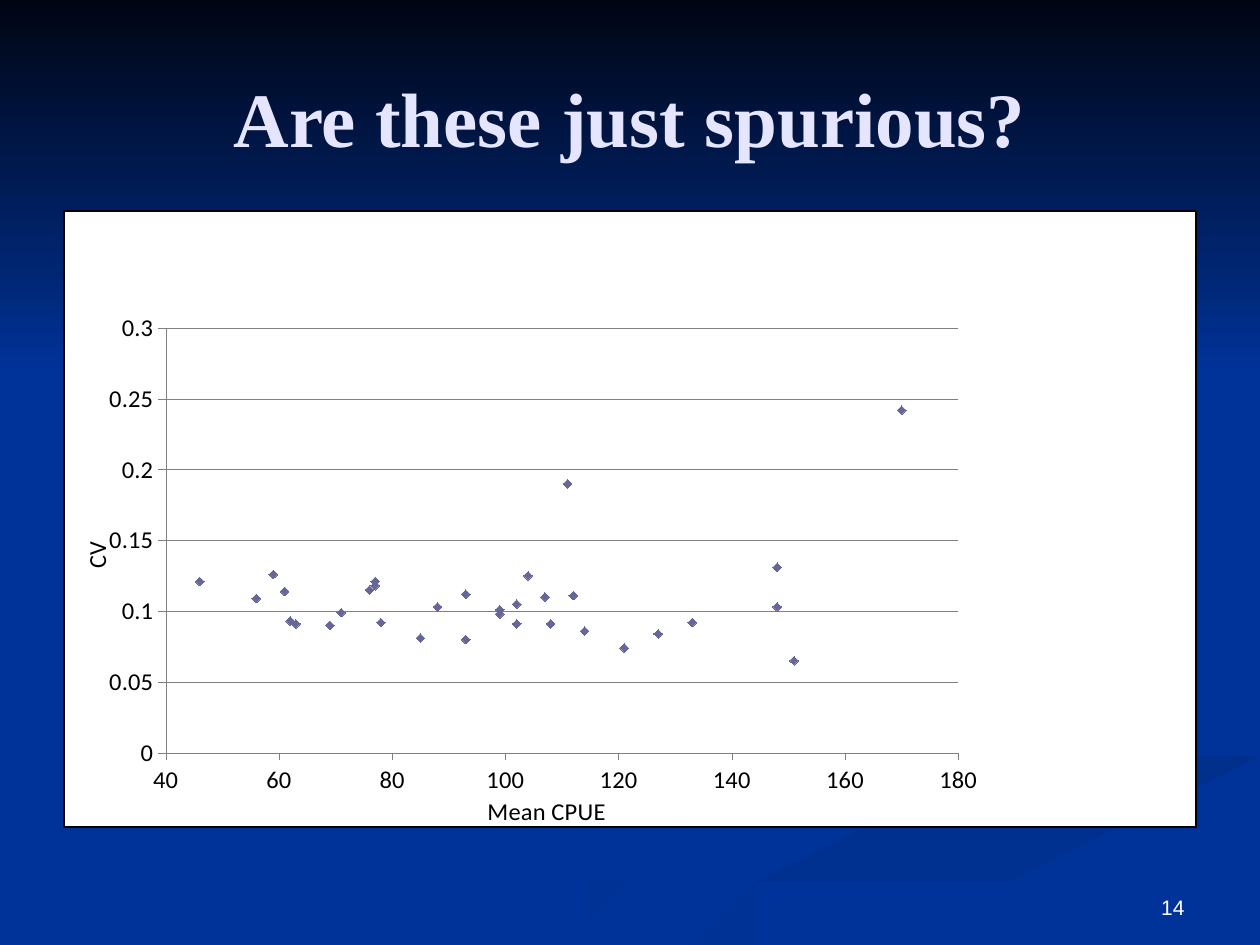
from lxml import etree
from pptx import Presentation
from pptx.chart.data import XyChartData
from pptx.dml.color import RGBColor
from pptx.enum.chart import XL_CHART_TYPE as ChartType, XL_MARKER_STYLE as Marker, XL_TICK_MARK as Tick
from pptx.enum.text import MSO_ANCHOR as Anchor, PP_ALIGN as Align
from pptx.oxml import parse_xml
from pptx.oxml.ns import nsdecls, qn
from pptx.util import Inches, Pt

WIDTH, HEIGHT = 10, 7.5
MARGIN = 0.05 * WIDTH
CONTENT = WIDTH - 2 * MARGIN

COLORS = {
    "blue": "003399", "night": "000514", "title": "E5E5FF", "white": "FFFFFF",
    "black": "000000", "grid": "808080", "marker": "666699",
    "shade_1": "003193", "shade_2": "002F8C", "shade_3": "003091",
}

# Each ribbon: first colour, last colour, clockwise angle, outline in inches
RIBBONS = [
    ("blue", "shade_1", 0, [
        (7.8, 5.5), (6.3, 5), (5.75, 4.6), (6.1, 5), (7.6, 5.5), (7.8, 5.8), (6.5, 6.2),
        (5, 6.6), (3.8, 7.1), (3, 7.5), (3.6, 7.5), (5, 6.9), (6.2, 6.5), (7.8, 6), (8, 5.8)]),
    ("shade_2", "blue", 90, [
        (5, 7.5), (5.7, 7.5), (6.5, 7.1), (7.8, 6.6), (10, 6.1), (10, 5.8), (9.2, 6.06),
        (7.6, 6.5), (6.3, 6.9)]),
    ("shade_3", "blue", 45, [
        (7.8, 4.6), (8.3, 5), (8.05, 4.7), (8.6, 4.4), (10, 4.2), (10, 4), (9.3, 4.15), (8.2, 4.3)]),
    ("night", "blue", 90, [(0, 0), (0, 3.08), (WIDTH, 3.08), (WIDTH, 0)]),
]

MEAN_CPUE = [59, 127, 99, 121, 99, 112, 148, 133, 148, 104, 93, 114, 102, 111, 69, 77, 56,
             77, 107, 85, 102, 170, 78, 108, 62, 88, 61, 46, 76, 63, 71, 93, 151]
CV = [0.126, 0.084, 0.101, 0.074, 0.098, 0.111, 0.103, 0.092, 0.131, 0.125, 0.112, 0.086,
      0.105, 0.19, 0.09, 0.121, 0.109, 0.118, 0.11, 0.081, 0.091, 0.242, 0.092, 0.091,
      0.093, 0.103, 0.114, 0.121, 0.115, 0.091, 0.099, 0.08, 0.065]


def rgb(name):
    return RGBColor.from_string(COLORS[name])


def add_ribbon(slide, first, last, angle, outline):
    builder = slide.shapes.build_freeform(*outline[0], scale=Inches(1))
    builder.add_line_segments(outline[1:], close=True)
    shape = builder.convert_to_shape()
    shape.shadow.inherit = False
    shape.line.fill.background()
    shape.fill.gradient()
    shape.fill.gradient_angle = -angle % 360
    for stop, color in zip(shape.fill.gradient_stops, (first, last)):
        stop.color.rgb = rgb(color)


def style_font(font, name, size, color, bold=False):
    font.name, font.size, font.bold = name, Pt(size), bold
    font.color.rgb = rgb(color)


def add_text(slide, text, box, align, anchor, **style):
    frame = slide.shapes.add_textbox(*map(Inches, box)).text_frame
    frame.word_wrap = True
    frame.vertical_anchor = anchor
    paragraph = frame.paragraphs[0]
    paragraph.text = text
    paragraph.alignment = align
    style_font(paragraph.font, **style)


def set_layout(parent, index, **shares):
    """Place a chart part by hand, in shares of the chart's size."""
    layout = parent.find(qn("c:layout"))
    if layout is None:
        layout = etree.Element(qn("c:layout"))
        parent.insert(index, layout)
    manual = etree.SubElement(layout, qn("c:manualLayout"))
    target = {"layoutTarget": "inner"} if "w" in shares else {}
    for tag, value in {**target, "xMode": "edge", "yMode": "edge", **shares}.items():
        etree.SubElement(manual, qn(f"c:{tag}")).set("val", str(value))


def white_area(border=""):
    return parse_xml(
        f'<c:spPr {nsdecls("c", "a")}><a:solidFill><a:srgbClr val="{COLORS["white"]}"/>'
        f"</a:solidFill>{border}</c:spPr>")


def style_line(line):
    line.color.rgb = rgb("grid")
    line.width = Pt(0.25)


def style_axis(axis, title, low, high, step, x, y):
    axis.minimum_scale, axis.maximum_scale, axis.major_unit = low, high, step
    axis.major_tick_mark, axis.minor_tick_mark = Tick.OUTSIDE, Tick.NONE
    axis.tick_labels.number_format = "General"
    axis.tick_labels.number_format_is_linked = False
    style_line(axis.format.line)
    paragraph = axis.axis_title.text_frame.paragraphs[0]
    paragraph.text = title
    style_font(paragraph.font, "Calibri", 14, "black")
    set_layout(axis.axis_title._element, 1, x=x, y=y)


def add_scatter(slide, box):
    data = XyChartData()
    series_data = data.add_series("Series 1")
    for cpue, cv in zip(MEAN_CPUE, CV):
        series_data.add_data_point(cpue, cv)
    chart = slide.shapes.add_chart(ChartType.XY_SCATTER, *map(Inches, box), data).chart
    chart.has_title = chart.has_legend = False
    style_font(chart.font, "Calibri", 14, "black")

    style_axis(chart.category_axis, "Mean CPUE", 40, 180, 20, x=0.37, y=0.94)
    style_axis(chart.value_axis, "CV", 0, 0.3, 0.05, x=0.01, y=0.53)
    chart.category_axis.has_major_gridlines = False
    style_line(chart.value_axis.major_gridlines.format.line)

    plot = chart.plots[0]
    plot.vary_by_categories = False
    marker = plot.series[0].marker
    marker.style, marker.size = Marker.DIAMOND, 5
    marker.format.fill.solid()
    marker.format.fill.fore_color.rgb = rgb("marker")
    marker.format.line.color.rgb = rgb("marker")

    chart_element = chart.element.find(qn("c:chart"))
    plot_area = chart_element.find(qn("c:plotArea"))
    set_layout(plot_area, 0, x=0.09, y=0.19, w=0.7, h=0.69)
    plot_area.append(white_area())
    chart_element.addnext(white_area(
        f'<a:ln w="{Pt(1)}"><a:solidFill><a:srgbClr val="{COLORS["black"]}"/></a:solidFill></a:ln>'))


def main():
    presentation = Presentation()
    presentation.slide_width, presentation.slide_height = Inches(WIDTH), Inches(HEIGHT)
    slide = presentation.slides.add_slide(presentation.slide_layouts[6])
    slide.background.fill.solid()
    slide.background.fill.fore_color.rgb = rgb("blue")
    for ribbon in RIBBONS:
        add_ribbon(slide, *ribbon)
    add_text(slide, "Are these just spurious?", (MARGIN, 0.04 * HEIGHT, CONTENT, HEIGHT / 6),
             Align.CENTER, Anchor.MIDDLE, name="Times New Roman", size=44, color="title", bold=True)
    number_width = 2.33
    add_text(slide, "14", (WIDTH - MARGIN - number_width, 0.91 * HEIGHT, number_width, 0.52),
             Align.RIGHT, Anchor.BOTTOM, name="Arial", size=12, color="white")
    add_scatter(slide, (MARGIN, 1.67, CONTENT, 0.66 * HEIGHT))
    presentation.save("out.pptx")


if __name__ == "__main__":
    main()
